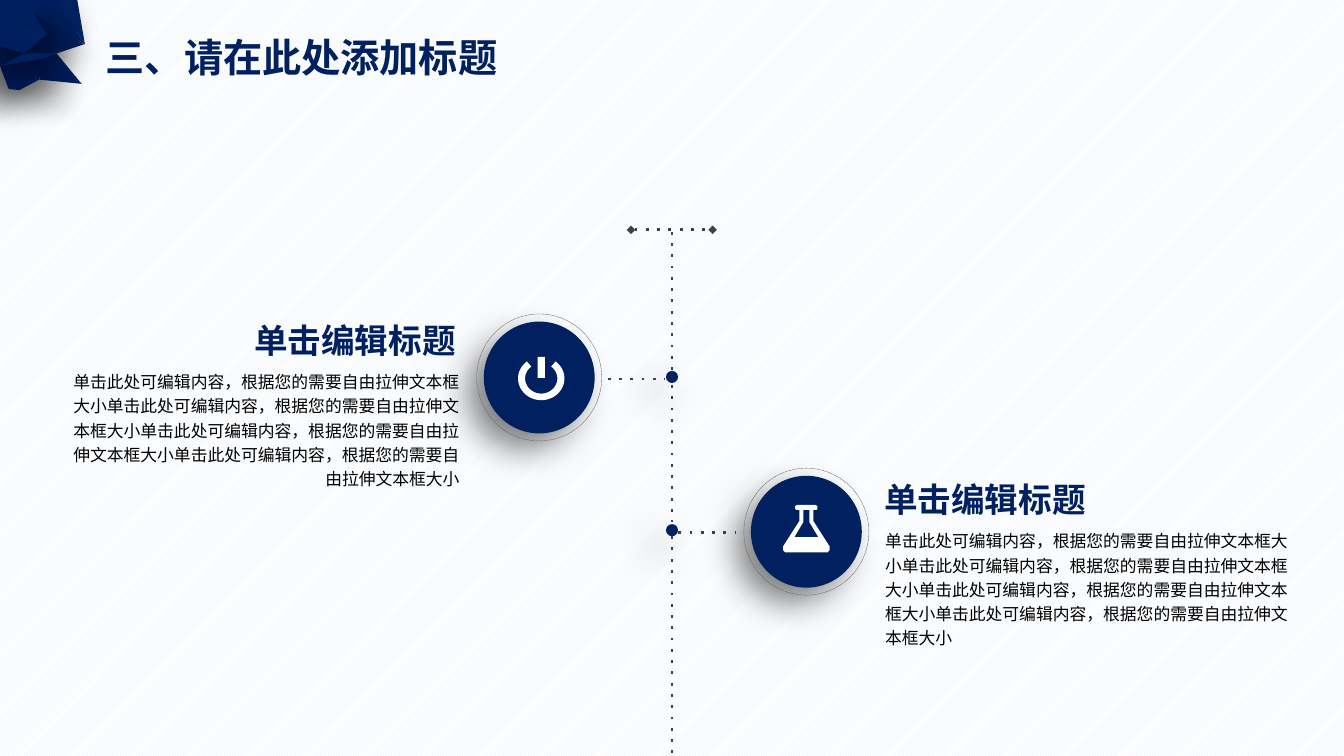
import math
from pptx import Presentation, util as u
from pptx.dml.color import RGBColor
from pptx.enum import dml, shapes, text
from pptx.oxml import parse_xml
from pptx.oxml.ns import nsdecls, qn

NAVY = RGBColor(0x00, 0x20, 0x60)
BLACK = RGBColor(0, 0, 0)
WHITE = RGBColor(0xFF, 0xFF, 0xFF)
GREY = RGBColor(0x66, 0x66, 0x66)
DARK = RGBColor(0x40, 0x40, 0x40)
PALE = RGBColor(0xDE, 0xEB, 0xF7)
CJK = "Noto Sans CJK SC"

prs = Presentation()
prs.slide_width, prs.slide_height = u.Emu(12192000), u.Emu(6858000)
G = prs.slide_width // 80
MIL = u.Inches(0.001)
s = prs.slides.add_slide(prs.slide_layouts[4])
bg = s.background.fill
bg.patterned()
bg.pattern = dml.MSO_PATTERN.DARK_UPWARD_DIAGONAL
bg.fore_color.rgb, bg.back_color.rgb = PALE, WHITE


def write(sp, words, box, size, color=NAVY, font=CJK, bold=False, align=text.PP_ALIGN.LEFT,
          wrap=True, spacing=None, before=None):
    sp.left, sp.top, sp.width, sp.height = [round(v * G) for v in box]
    tf = sp.text_frame
    tf.word_wrap, tf.auto_size = wrap, text.MSO_AUTO_SIZE.SHAPE_TO_FIT_TEXT
    tf.vertical_anchor = text.MSO_ANCHOR.TOP
    p = tf.paragraphs[0]
    p.alignment, p.line_spacing, p.space_before = align, spacing, before
    pPr = p._p.get_or_add_pPr()
    pPr.set("marL", "0")
    pPr.set("indent", "0")
    pPr.append(parse_xml(f'<a:buNone {nsdecls("a")}/>'))
    r = p.add_run()
    r.text = words
    r.font.size, r.font.bold, r.font.name = u.Pt(size), bold, font
    r.font.color.rgb = color
    r._r.get_or_add_rPr().append(parse_xml(f'<a:ea {nsdecls("a")} typeface="{CJK}"/>'))


def paint(sp, color, shadow=True):
    sp.fill.solid()
    sp.fill.fore_color.rgb = color
    sp.line.fill.background()
    sp.shadow.inherit = False
    if shadow:
        sp._element.spPr.find(qn("a:effectLst")).append(parse_xml(
            f'<a:outerShdw {nsdecls("a")} blurRad="{u.Pt(25)}" dist="{u.Pt(15)}" dir="8100000" '
            'algn="tr" rotWithShape="0"><a:srgbClr val="000000"><a:alpha val="50000"/>'
            '</a:srgbClr></a:outerShdw>'))


corners = dict(a=(750, 800), b=(360, 760), c=(400, 560), d=(0, 630), e=(180, 860), f=(80, 850),
               g=(220, 510), h=(0, 440), i=(520, 510), j=(430, 330), k=(780, 420), l=(310, 130),
               m=(410, 0), n=(510, 0), o=(710, 0), p=(0, 0), q=(0, 180), r=(0, 290))
facets = "abc dbc ebd efd dgh ica jgi ikj jkl mlkn nko mlp qplj rgjq hrg dgc gic".split()
gem = s.shapes.add_group_shape().shapes
for sx, sy in [(1, 1), (1.08, 1.04)]:
    for facet in facets:
        pts = [(corners[c][0] * sx, corners[c][1] * sy) for c in facet]
        fb = gem.build_freeform(*pts[0], scale=MIL)
        fb.add_line_segments(pts[1:])
        paint(fb.convert_to_shape(), NAVY)
for c in "efbcigjl":
    x, y = corners[c]
    paint(gem.add_shape(shapes.MSO_SHAPE.OVAL, (x - 5) * MIL, (y - 5) * MIL, 10 * MIL, 10 * MIL), NAVY)

write(s.shapes.title, "三、请在此处添加标题", (5.7, 1.68, 24.78, 3.42), 28, bold=True, wrap=False)

for cx, cy in [(48, 31.65), (32.1, 22.47)]:
    badge = s.shapes.add_group_shape().shapes
    disc, ring = [badge.add_shape(shapes.MSO_SHAPE.OVAL, round((cx - w / 2) * G), round((cy - h / 2) * G),
                                  round(w * G), round(h * G)) for w, h in [(6.6, 6.66), (7.44, 7.56)]]
    paint(disc, NAVY)
    ring.fill.background()
    ring.line.color.rgb, ring.line.width = GREY, u.Pt(0.25)
    ring.line.dash_style = dml.MSO_LINE.SQUARE_DOT
    ring.shadow.inherit = False

for y in (22.44, 31.56):
    paint(s.shapes.add_shape(shapes.MSO_SHAPE.OVAL, round(39.64 * G), round((y - 0.36) * G),
                             round(0.72 * G), round(0.72 * G)), NAVY)

for x1, y1, x2, y2, ends in [(40, 13.8, 40, 22.02, ""), (36.18, 22.56, 39.6, 22.56, ""),
                             (40, 22.92, 40, 31.08, ""), (40.38, 31.68, 43.8, 31.68, ""),
                             (40, 31.92, 40, 45, ""), (37.56, 13.68, 42.42, 13.68, "diamond")]:
    line = s.shapes.add_connector(shapes.MSO_CONNECTOR.STRAIGHT, *[round(v * G) for v in (x1, y1, x2, y2)])
    line.line.color.rgb, line.line.width = DARK, u.Pt(2)
    ln = line.line._get_or_add_ln()
    ln.append(parse_xml(f'<a:prstDash {nsdecls("a")} val="dot"/>'))
    for tag in ("headEnd", "tailEnd") if ends else ():
        ln.append(parse_xml(f'<a:{tag} {nsdecls("a")} type="{ends}"/>'))
    line._element.spPr.append(parse_xml(f'<a:effectLst {nsdecls("a")}/>'))

body = "单击此处可编辑内容，根据您的需要自由拉伸文本框大小" * 4
for idx, head_box, body_box, align in [
        (1, (14.52, 18.72, 13.32, 3), (3.42, 21.6, 24.54, 7.86), text.PP_ALIGN.RIGHT),
        (3, (52.02, 28.2, 13.32, 3), (52.08, 31.08, 25.74, 7.86), text.PP_ALIGN.LEFT)]:
    holders = {sp.placeholder_format.idx: sp for sp in s.placeholders}
    write(holders[idx], "单击编辑标题", head_box, 24, font="Arial", bold=True, wrap=False)
    write(holders[idx + 1], body, body_box, 12, color=BLACK, align=align, spacing=1.2, before=u.Pt(8.5))

halves = [[(90, 0), (110, 10), (110, 40), (100, 50), (70, 50), (70, 160), (230, 410),
           (230, 450), (210, 470), (190, 470)], [(30, 50), (30, 170), (120, 320)]]
flask = [half + [(-x, y) for x, y in reversed(half)] for half in halves]
flask[1].reverse()
sweep = [math.radians(a) for a in range(-52, 233, 4)]
power = [[(230 * math.cos(a), 215 * math.sin(a)) for a in sweep]
         + [(160 * math.cos(a), 150 * math.sin(a)) for a in reversed(sweep)],
         [(-35, -215), (35, -215), (35, -5), (-35, -5)]]
for contours, x, y in [(flask, 48, 30.06), (power, 32.22, 22.53)]:
    fb = s.shapes.build_freeform(*contours[0][0], scale=MIL)
    fb.add_line_segments(contours[0][1:])
    fb.move_to(*contours[1][0])
    fb.add_line_segments(contours[1][1:])
    paint(fb.convert_to_shape(round(x * G), round(y * G)), WHITE, shadow=False)

prs.save("out.pptx")
